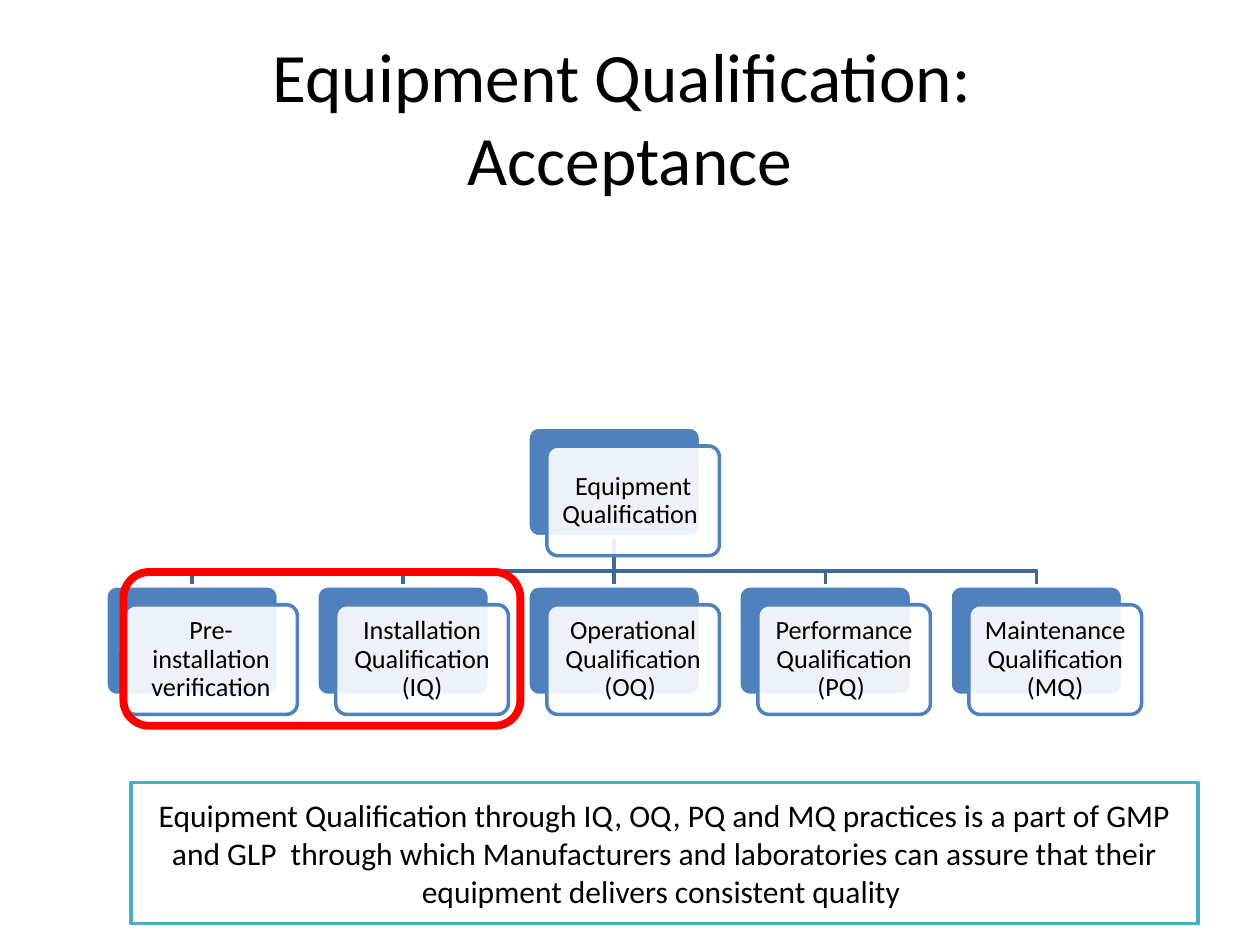
import dataclasses
import pptx
import pptx.dml.color
import pptx.enum.shapes
import pptx.enum.text
import pptx.oxml
import pptx.oxml.ns
import pptx.util
from pptx.util import Inches

KIND = pptx.enum.shapes.MSO_SHAPE


@dataclasses.dataclass(frozen=True)
class Theme:
    """Colours, font and type sizes of the slide."""
    font: str = "Calibri"
    ink: str = "000000"
    white: str = "FFFFFF"
    blue: str = "4F81BD"
    link: str = "3F6797"
    teal: str = "4BACC6"
    red: str = "FF0000"
    title: float = 39.6
    card: float = 15
    note: float = 18
    thin: float = 2
    thick: float = 4.5


THEME = Theme()
STEPS = [
    "Pre-installation verification",
    "Installation Qualification (IQ)",
    "Operational Qualification (OQ) ",
    "Performance Qualification (PQ) ",
    "Maintenance Qualification (MQ)",
]


def rgb(code):
    """Return the colour for a hex code."""
    return pptx.dml.color.RGBColor.from_string(code)


def stroke(line, color, width=THEME.thin):
    """Set the colour and width of a line."""
    line.color.rgb = rgb(color)
    line.width = pptx.util.Pt(width)


def write(shape, lines, size, inset=None, space=None):
    """Fill a shape with one centred paragraph, broken into lines."""
    frame = shape.text_frame
    frame.word_wrap = True
    frame.vertical_anchor = pptx.enum.text.MSO_ANCHOR.MIDDLE
    if inset is not None:
        frame.margin_left = frame.margin_right = Inches(inset)
        frame.margin_top = frame.margin_bottom = Inches(inset)
    para = frame.paragraphs[0]
    para.alignment = pptx.enum.text.PP_ALIGN.CENTER
    para.line_spacing = space
    for i, text in enumerate(lines):
        if i:
            para.add_line_break()
        run = para.add_run()
        run.text = text
        run.font.name = THEME.font
        run.font.size = pptx.util.Pt(size)
        run.font.color.rgb = rgb(THEME.ink)


def panel(slide, kind, box, fill, line, width=THEME.thin, round=None, alpha=None):
    """Add a preset shape with a flat fill and an outline."""
    shape = slide.shapes.add_shape(kind, *map(Inches, box))
    shape.shadow.inherit = False
    if round is not None:
        shape.adjustments[0] = round
    if fill is None:
        shape.fill.background()
    else:
        shape.fill.solid()
        shape.fill.fore_color.rgb = rgb(fill)
    if alpha is not None:
        tint = shape._element.spPr.find(".//" + pptx.oxml.ns.qn("a:srgbClr"))
        tint.append(pptx.oxml.parse_xml(
            f'<a:alpha {pptx.oxml.ns.nsdecls("a")} val="{alpha * 1000}"/>'))
    stroke(shape.line, line, width)
    return shape


def title(slide, box):
    """Add the heading in its box."""
    shape = slide.shapes.add_textbox(*map(Inches, box))
    write(shape, ["Equipment Qualification: ", "Acceptance"], THEME.title)


def branch(slide, start, end, bend):
    """Join a parent to a child with a stepped or straight line."""
    (x, top), (left, foot) = start, end
    if x == left:
        link = slide.shapes.add_connector(
            pptx.enum.shapes.MSO_CONNECTOR.STRAIGHT,
            *map(Inches, (x, top, left, foot)))
        link._element.spPr.append(pptx.oxml.parse_xml(
            f'<a:effectLst {pptx.oxml.ns.nsdecls("a")}/>'))
    else:
        pen = slide.shapes.build_freeform(Inches(x), Inches(top))
        turns = [(x, bend), (left, bend), (left, foot)]
        pen.add_line_segments([(Inches(a), Inches(b)) for a, b in turns], close=False)
        link = pen.convert_to_shape()
        link.fill.background()
        link.shadow.inherit = False
    stroke(link.line, THEME.link)


def card(slide, box, text):
    """Add a blue card with an offset, see-through label over it."""
    left, top, wide, high = box
    panel(slide, KIND.ROUNDED_RECTANGLE, box, THEME.blue, THEME.white, round=0.1)
    front = panel(slide, KIND.ROUNDED_RECTANGLE, (left + 0.15, top + 0.15, wide, high),
                  THEME.white, THEME.blue, round=0.1, alpha=90)
    write(front, [text], THEME.card, inset=0.06, space=0.9)


def chart(slide, box):
    """Add the tree: a root card above an even row of step cards."""
    left, top, wide, high = box
    size = (1.37, 0.87)
    gap = (wide - size[0]) / (len(STEPS) - 1)
    row = top + high - size[1]
    spots = [left + gap * i for i in range(len(STEPS))]
    mid = spots[len(spots) // 2]
    half = size[0] / 2
    for spot in reversed(spots):
        branch(slide, (mid + half, top + size[1]), (spot + half, row), row - 0.12)
    card(slide, (mid, top, *size), "Equipment Qualification ")
    for spot, text in zip(spots, STEPS):
        card(slide, (spot, row, *size), text)


def note(slide, box):
    """Add the framed closing statement."""
    shape = panel(slide, KIND.RECTANGLE, box, THEME.white, THEME.teal)
    write(shape, ["Equipment Qualification through IQ, OQ, PQ and MQ practices is a part "
                  "of GMP and GLP  through which Manufacturers and laboratories can assure "
                  "that their equipment delivers consistent quality "], THEME.note)


def focus(slide, box):
    """Add the red ring around the acceptance steps."""
    panel(slide, KIND.ROUNDED_RECTANGLE, box, None, THEME.red, THEME.thick)


def main():
    """Build the slide and save it."""
    deck = pptx.Presentation()
    deck.slide_width, deck.slide_height = Inches(10), Inches(7.5)
    slide = deck.slides.add_slide(deck.slide_layouts[6])
    title(slide, (0.5, 0.3, 9, 1.25))
    chart(slide, (0.84, 3.39, 8.07, 2.13))
    note(slide, (1.04, 6.21, 8.47, 1.12))
    focus(slide, (0.98, 4.54, 3.15, 1.22))
    deck.save("out.pptx")


if __name__ == "__main__":
    main()
